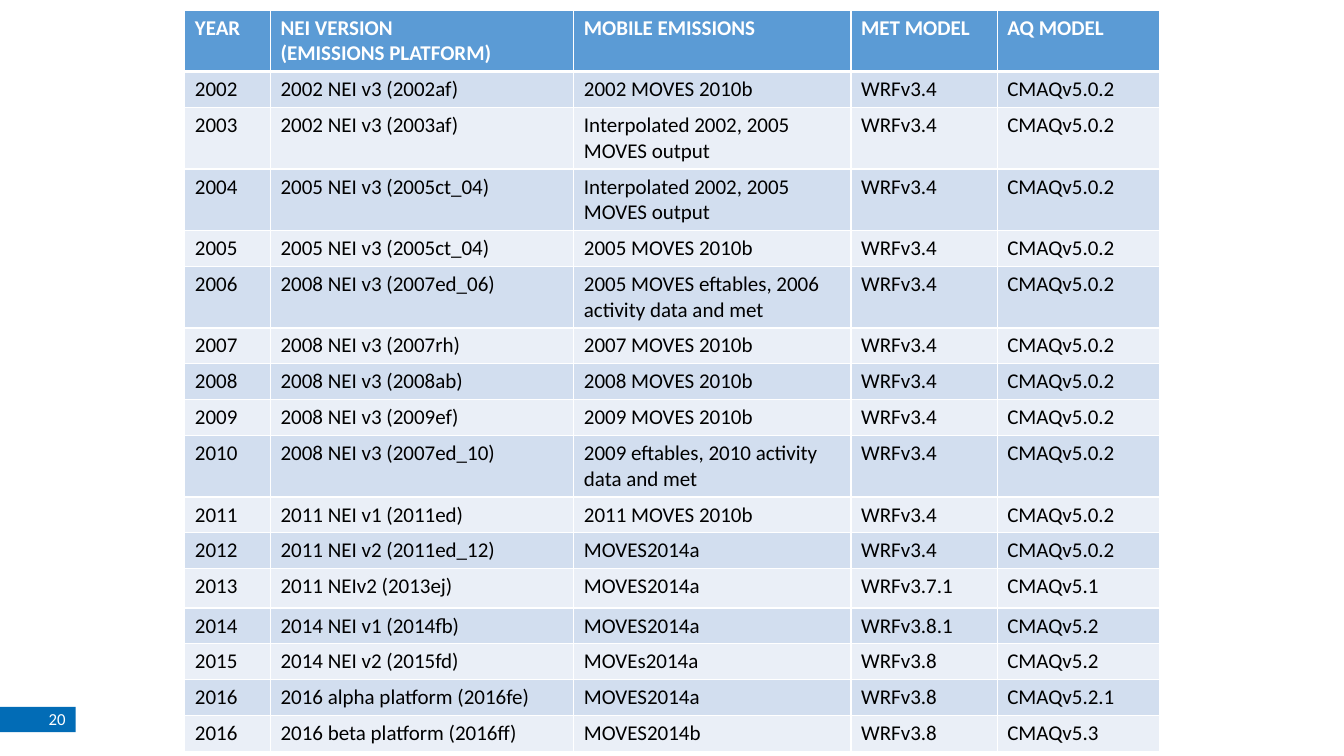
from lxml.etree import SubElement
from pptx import Presentation
from pptx.dml.color import RGBColor
from pptx.enum.shapes import MSO_SHAPE
from pptx.enum.text import MSO_ANCHOR, PP_ALIGN
from pptx.oxml.ns import qn
from pptx.util import Pt

COLORS = {
    "header": "5B9BD5",
    "odd row": "D2DEEF",
    "even row": "EAEFF7",
    "page tab": "026CB6",
    "white": "FFFFFF",
    "black": "000000",
}
HEADINGS = ["YEAR", "NEI VERSION\n(EMISSIONS PLATFORM)", "MOBILE EMISSIONS", "MET MODEL", "AQ MODEL"]
MODEL_YEARS = [
    ["2002", "2002 NEI v3 (2002af)", "2002 MOVES 2010b", "WRFv3.4", "CMAQv5.0.2"],
    ["2003", "2002 NEI v3 (2003af)", "Interpolated 2002, 2005 MOVES output", "WRFv3.4", "CMAQv5.0.2"],
    ["2004", "2005 NEI v3 (2005ct_04)", "Interpolated 2002, 2005 MOVES output", "WRFv3.4", "CMAQv5.0.2"],
    ["2005", "2005 NEI v3 (2005ct_04)", "2005 MOVES 2010b", "WRFv3.4", "CMAQv5.0.2"],
    ["2006", "2008 NEI v3 (2007ed_06)", "2005 MOVES eftables, 2006 activity data and met", "WRFv3.4", "CMAQv5.0.2"],
    ["2007", "2008 NEI v3 (2007rh)", "2007 MOVES 2010b", "WRFv3.4", "CMAQv5.0.2"],
    ["2008", "2008 NEI v3 (2008ab)", "2008 MOVES 2010b", "WRFv3.4", "CMAQv5.0.2"],
    ["2009", "2008 NEI v3 (2009ef)", "2009 MOVES 2010b", "WRFv3.4", "CMAQv5.0.2"],
    ["2010", "2008 NEI v3 (2007ed_10)", "2009 eftables, 2010 activity data and met", "WRFv3.4", "CMAQv5.0.2"],
    ["2011", "2011 NEI v1 (2011ed)", "2011 MOVES 2010b", "WRFv3.4", "CMAQv5.0.2"],
    ["2012", "2011 NEI v2 (2011ed_12)", "MOVES2014a", "WRFv3.4", "CMAQv5.0.2"],
    ["2013", "2011 NEIv2 (2013ej)", "MOVES2014a", "WRFv3.7.1", "CMAQv5.1"],
    ["2014", "2014 NEI v1 (2014fb)", "MOVES2014a", "WRFv3.8.1", "CMAQv5.2"],
    ["2015", "2014 NEI v2 (2015fd)", "MOVEs2014a", "WRFv3.8", "CMAQv5.2"],
    ["2016", "2016 alpha platform (2016fe)", "MOVES2014a", "WRFv3.8", "CMAQv5.2.1"],
    ["2016", "2016 beta platform (2016ff)", "MOVES2014b", "WRFv3.8", "CMAQv5.3"],
]
COLUMN_WIDTHS = [61.2, 216.7, 198, 104.4, 115.9]
ROW_HEIGHT = 25.2
TALL_ROWS = {3: 43.9, 12: 28.1}


def write(text_frame, text, size=15, color="black", bold=False, align=PP_ALIGN.LEFT):
    text_frame.text = text
    for paragraph in text_frame.paragraphs:
        paragraph.alignment = align
        font = paragraph.runs[0].font
        font.name = "Calibri"
        font.size = Pt(size)
        font.bold = bold
        font.color.rgb = RGBColor.from_string(COLORS[color])


def add_borders(cell, top, bottom):
    """Draw white cell borders; top and bottom are widths in points."""
    properties = cell._tc.get_or_add_tcPr()
    for side, width in (("L", 1), ("R", 1), ("T", top), ("B", bottom)):
        line = SubElement(properties, qn(f"a:ln{side}"), w=str(Pt(width)))
        fill = SubElement(line, qn("a:solidFill"))
        SubElement(fill, qn("a:srgbClr"), val=COLORS["white"])


presentation = Presentation()
presentation.slide_width = Pt(960)
presentation.slide_height = Pt(540)
slide = presentation.slides.add_slide(presentation.slide_layouts[6])

page_tab = slide.shapes.add_shape(MSO_SHAPE.RECTANGLE, Pt(0), Pt(505), Pt(54), Pt(18))
page_tab.shadow.inherit = False
page_tab.fill.solid()
page_tab.fill.fore_color.rgb = RGBColor.from_string(COLORS["page tab"])
page_tab.line.fill.background()

rows = [HEADINGS] + MODEL_YEARS
table = slide.shapes.add_table(
    len(rows), len(HEADINGS), Pt(132), Pt(7.2), Pt(sum(COLUMN_WIDTHS)), Pt(ROW_HEIGHT * len(rows))
).table
for column, width in zip(table.columns, COLUMN_WIDTHS):
    column.width = Pt(width)

for row_index, texts in enumerate(rows):
    table.rows[row_index].height = Pt(TALL_ROWS.get(row_index, ROW_HEIGHT))
    is_header = row_index == 0
    fill_name = "header" if is_header else "odd row" if row_index % 2 else "even row"
    for column_index, text in enumerate(texts):
        cell = table.cell(row_index, column_index)
        add_borders(cell, top=3 if row_index == 1 else 1, bottom=3 if is_header else 1)
        cell.fill.solid()
        cell.fill.fore_color.rgb = RGBColor.from_string(COLORS[fill_name])
        write(cell.text_frame, text, color="white" if is_header else "black", bold=is_header)

page_number = slide.shapes.add_textbox(Pt(-162), Pt(499), Pt(216), Pt(28.8))
page_number.text_frame.word_wrap = True
page_number.text_frame.vertical_anchor = MSO_ANCHOR.MIDDLE
write(page_number.text_frame, "20", size=12, color="white", align=PP_ALIGN.RIGHT)

presentation.save("out.pptx")
